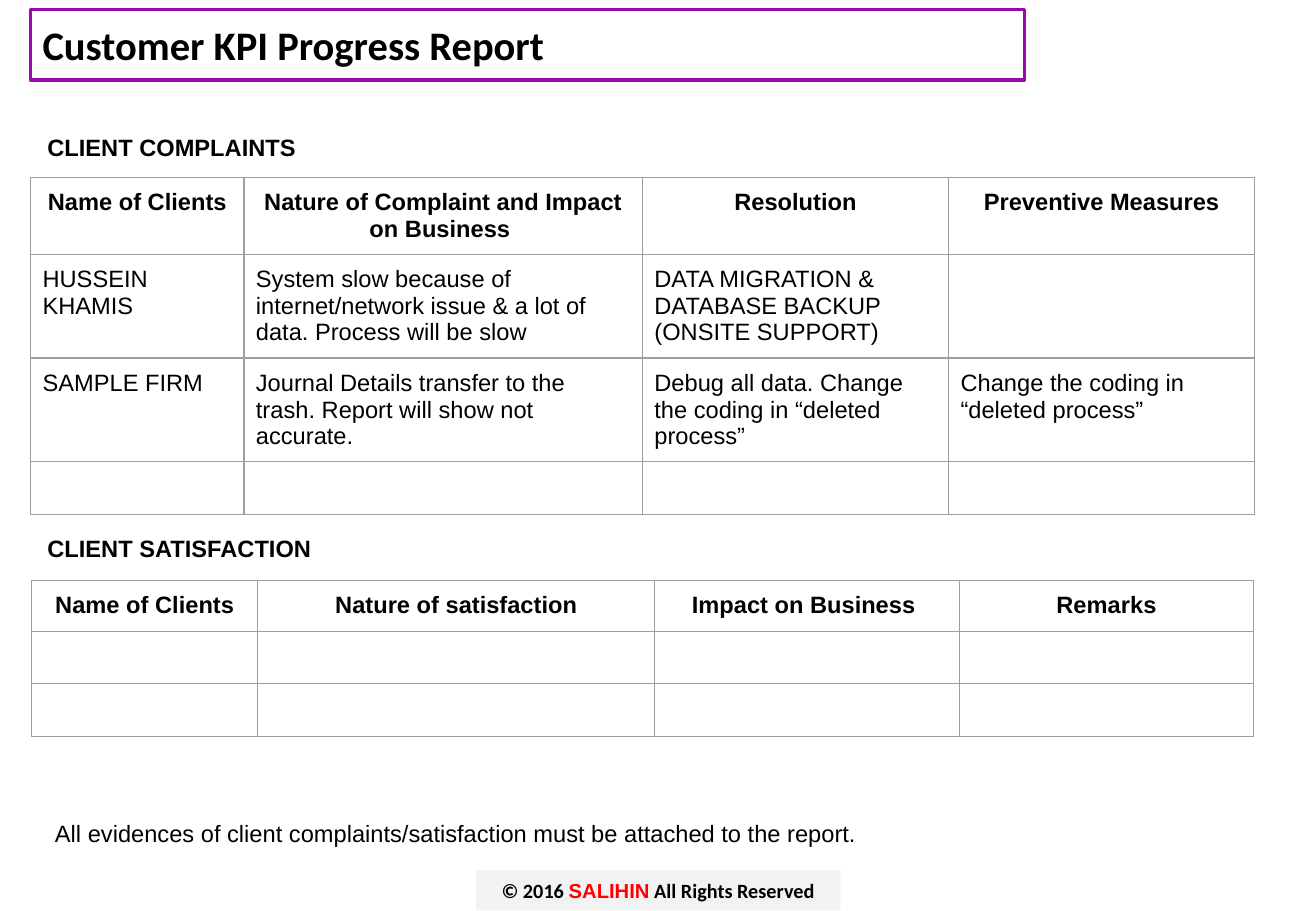
"""Builds the Customer KPI Progress Report slide."""
from dataclasses import dataclass

from lxml import etree
from pptx import Presentation
from pptx import util as u
from pptx.dml.color import RGBColor
from pptx.enum import shapes, text
from pptx.oxml.ns import qn


@dataclass(frozen=True)
class Theme:
    ink: str = "000000"
    accent: str = "FF0000"
    frame: str = "9C08AC"
    band: str = "F2F2F2"
    grid: str = "9E9E9E"
    body_font: str = "Arial"
    title_font: str = "Calibri"
    title_size: int = 24
    body_size: int = 14
    footer_size: int = 12


THEME = Theme()
SLIDE = (27.51, 19.05)
INSET = 0.25

TITLE = "Customer KPI Progress Report"
TITLE_PLACE = (0.64, 0.2, 20.78, 1.47)

FOOTER = [
    ("© 2016 ", THEME.title_font, THEME.ink),
    ("SALIHIN", THEME.body_font, THEME.accent),
    (" All Rights Reserved", THEME.title_font, THEME.ink),
]
FOOTER_PLACE = (9.95, 18.2, 7.62, 0.84)

NOTES = [
    ("CLIENT COMPLAINTS", True, (0.74, 2.54, 12.75, 1.17)),
    ("CLIENT SATISFACTION", True, (0.74, 10.92, 12.75, 1.17)),
    ("All evidences of client complaints/satisfaction must be attached to the report.",
     False, (0.9, 16.87, 21.49, 0.89)),
]

EMPTY_ROW = ["", "", "", ""]
TABLES = [
    {
        "corner": (0.64, 3.71),
        "columns": [4.46, 8.33, 6.4, 6.4],
        "heights": [1.6, 2.16, 2.16, 1.05],
        "rows": [
            ["Name of Clients", "Nature of Complaint and Impact on Business ",
             "Resolution", "Preventive Measures"],
            ["HUSSEIN KHAMIS",
             "System slow because of internet/network issue & a lot of data. Process will be slow",
             "DATA MIGRATION & DATABASE BACKUP (ONSITE SUPPORT)", ""],
            ["SAMPLE FIRM",
             "Journal Details transfer to the trash. Report will show not accurate.",
             "Debug all data. Change the coding in “deleted process”",
             "Change the coding in “deleted process”"],
            EMPTY_ROW,
        ],
    },
    {
        "corner": (0.66, 12.13),
        "columns": [4.73, 8.3, 6.36, 6.16],
        "heights": [1.07, 1.1, 1.1],
        "rows": [
            ["Name of Clients", "Nature of satisfaction", "Impact on Business ", "Remarks"],
            EMPTY_ROW,
            EMPTY_ROW,
        ],
    },
]


def add_span(para, words, size, font=THEME.body_font, color=THEME.ink, bold=False):
    span = para.add_run()
    span.text = words
    span.font.name = font
    span.font.size = u.Pt(size)
    span.font.bold = bold
    span.font.color.rgb = RGBColor.from_string(color)


def set_insets(holder):
    for side in ("left", "top", "right", "bottom"):
        setattr(holder, f"margin_{side}", u.Cm(INSET))


def add_panel(page, place, align, fill=None, line=None):
    panel = page.shapes.add_shape(shapes.MSO_SHAPE.RECTANGLE, *map(u.Cm, place))
    panel.shadow.inherit = False
    if fill:
        panel.fill.solid()
        panel.fill.fore_color.rgb = RGBColor.from_string(fill)
    else:
        panel.fill.background()
    if line:
        panel.line.color.rgb = RGBColor.from_string(line)
        panel.line.width = u.Pt(2.25)
    else:
        panel.line.fill.background()
    frame = panel.text_frame
    frame.word_wrap = True
    frame.vertical_anchor = text.MSO_ANCHOR.MIDDLE
    para = frame.paragraphs[0]
    para.alignment = align
    return para


def add_note(page, words, bold, place):
    frame = page.shapes.add_textbox(*map(u.Cm, place)).text_frame
    frame.word_wrap = True
    set_insets(frame)
    add_span(frame.paragraphs[0], words, THEME.body_size, bold=bold)


def draw_borders(cell):
    properties = cell._tc.get_or_add_tcPr()
    for side in ("lnL", "lnR", "lnT", "lnB"):
        border = etree.SubElement(properties, qn(f"a:{side}"), w=str(u.Pt(0.75)))
        fill = etree.SubElement(border, qn("a:solidFill"))
        etree.SubElement(fill, qn("a:srgbClr"), val=THEME.grid)


def fill_cell(cell, words, is_header):
    set_insets(cell)
    draw_borders(cell)
    cell.fill.background()
    para = cell.text_frame.paragraphs[0]
    if is_header:
        para.alignment = text.PP_ALIGN.CENTER
    if words:
        add_span(para, words, THEME.body_size, bold=is_header)
    else:
        etree.SubElement(para._p, qn("a:endParaRPr"), sz=str(THEME.body_size * 100))


def add_grid(page, corner, columns, heights, rows):
    size = (sum(columns), sum(heights))
    grid = page.shapes.add_table(len(rows), len(columns), *map(u.Cm, corner + size)).table
    grid.first_row = grid.horz_banding = False
    for column, width in zip(grid.columns, columns):
        column.width = u.Cm(width)
    for index, (row, height) in enumerate(zip(grid.rows, heights)):
        row.height = u.Cm(height)
        for cell, words in zip(row.cells, rows[index]):
            fill_cell(cell, words, index == 0)


def main():
    deck = Presentation()
    deck.slide_width, deck.slide_height = map(u.Cm, SLIDE)
    page = deck.slides.add_slide(deck.slide_layouts[6])

    footer = add_panel(page, FOOTER_PLACE, text.PP_ALIGN.CENTER, fill=THEME.band)
    for words, font, color in FOOTER:
        add_span(footer, words, THEME.footer_size, font, color, bold=True)
    title = add_panel(page, TITLE_PLACE, text.PP_ALIGN.LEFT, line=THEME.frame)
    add_span(title, TITLE, THEME.title_size, THEME.title_font, bold=True)

    for table in TABLES:
        add_grid(page, **table)
    for note in NOTES:
        add_note(page, *note)
    deck.save("out.pptx")


if __name__ == "__main__":
    main()
